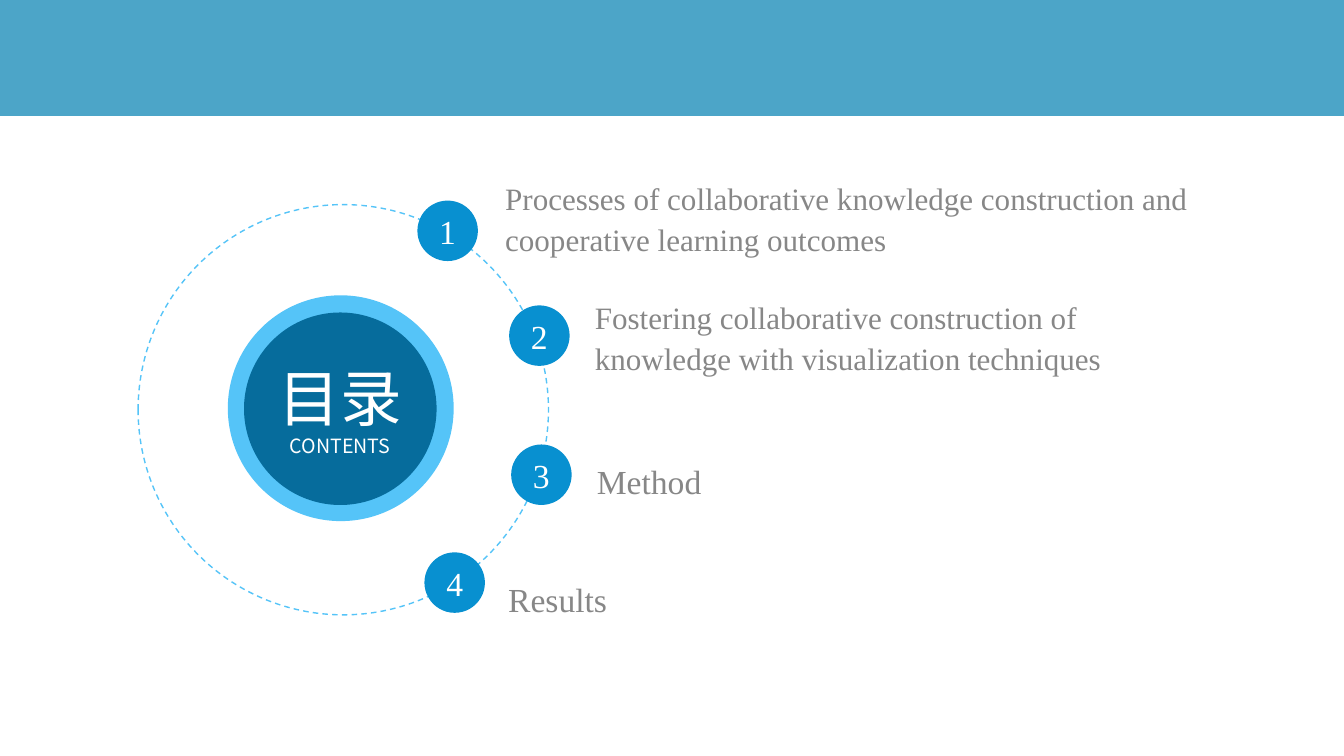
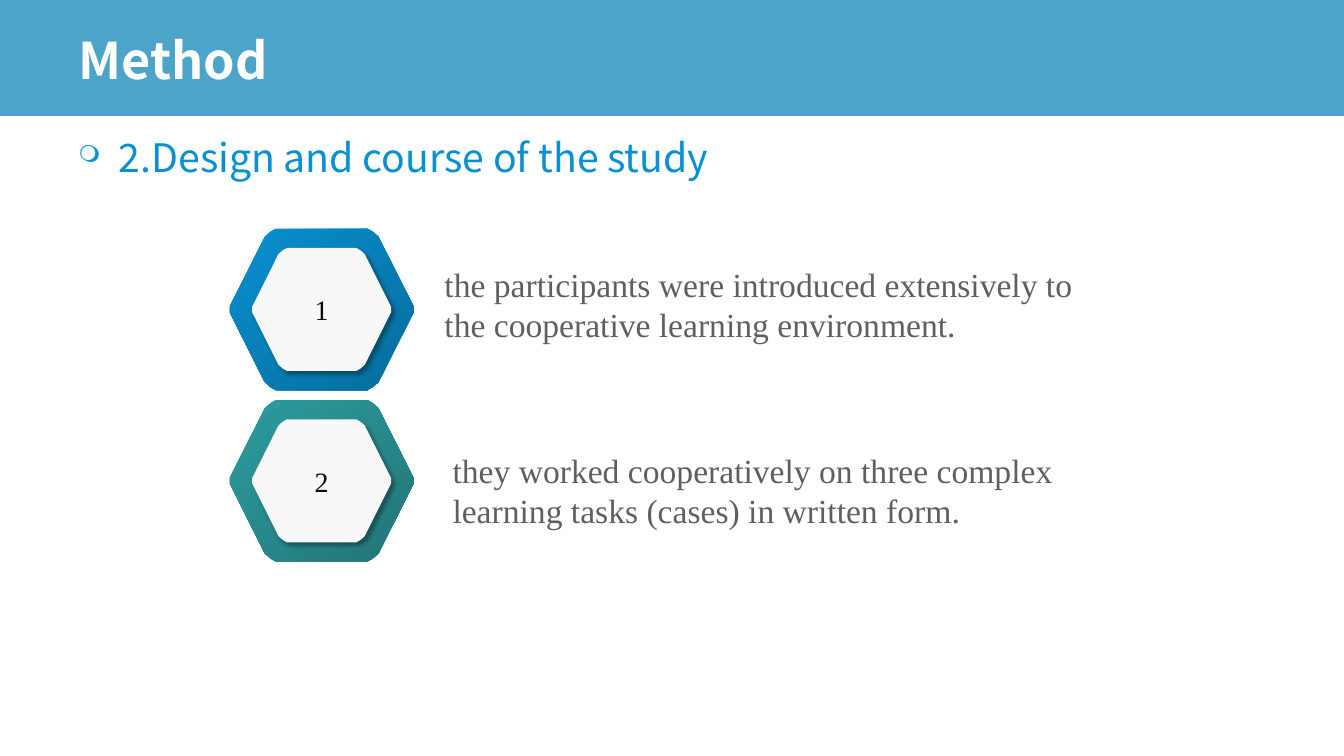
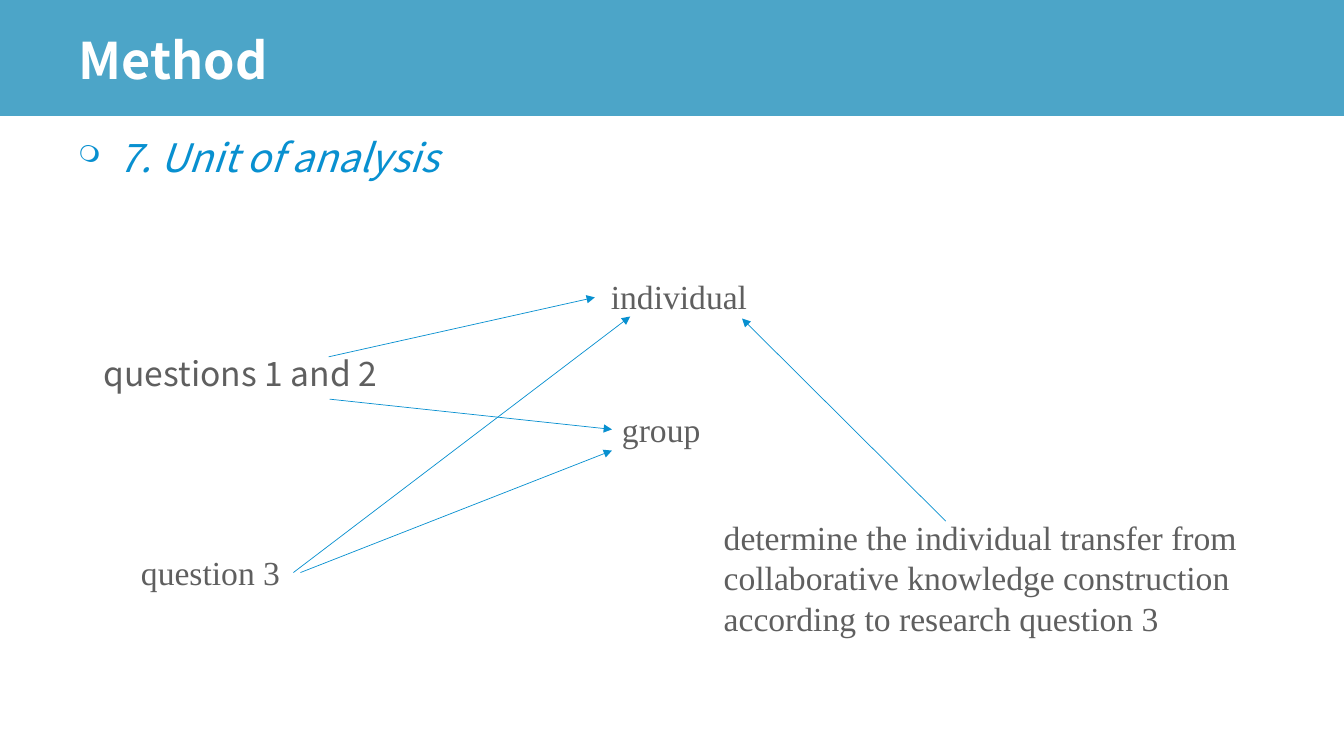
from dataclasses import dataclass, replace
from typing import NamedTuple

from lxml import etree
from pptx import Presentation
from pptx.dml.color import RGBColor
from pptx.enum.dml import MSO_LINE
from pptx.enum.shapes import MSO_CONNECTOR, MSO_SHAPE
from pptx.enum.text import MSO_ANCHOR, PP_ALIGN
from pptx.oxml.ns import qn
from pptx.util import Inches, Pt

RECT, OVAL = MSO_SHAPE.RECTANGLE, MSO_SHAPE.OVAL
STRAIGHT, DASH = MSO_CONNECTOR.STRAIGHT, MSO_LINE.DASH
TOP, MIDDLE = MSO_ANCHOR.TOP, MSO_ANCHOR.MIDDLE
LEFT, CENTER, JUSTIFY = PP_ALIGN.LEFT, PP_ALIGN.CENTER, PP_ALIGN.JUSTIFY

SANS, SERIF = "Noto Sans CJK SC", "Times New Roman"


@dataclass(frozen=True)
class Style:
    size: float
    color: str
    font: str = SERIF
    bold: bool = False
    italic: bool = False
    spacing: float = 1.0
    align: PP_ALIGN = LEFT


@dataclass(frozen=True)
class Theme:
    band: str = "0080B2"
    band_opacity: int = 70
    accent: str = "0890D0"
    accent_dark: str = "066C9C"
    accent_light: str = "55C4F8"
    teal: str = "2D9C9F"
    teal_dark: str = "227577"
    plate: str = "F8F8F8"
    title: Style = Style(36, "FFFFFF", SANS, bold=True, spacing=0.9)
    heading: Style = Style(28, "0890D0", SANS, spacing=1.1, align=JUSTIFY)
    body: Style = Style(24, "5F5F5F")
    agenda_long: Style = Style(22.2, "878787", spacing=1.1)
    agenda_short: Style = Style(24, "878787", spacing=1.2)
    badge: Style = Style(24, "FFFFFF", align=CENTER)
    hexagon: Style = Style(20, "080808", align=CENTER)
    contents: Style = Style(44, "FFFFFF", SANS, align=CENTER)
    contents_sub: Style = Style(14, "FFFFFF", SANS, align=CENTER)


THEME = Theme()


class Box(NamedTuple):
    left: float
    top: float
    width: float
    height: float


class Insets(NamedTuple):
    left: float = 0.1
    top: float = 0.05
    right: float = 0.1
    bottom: float = 0.05


class AgendaItem(NamedTuple):
    text: str
    style: Style
    badge_left: float
    badge_top: float
    text_box: Box


class Step(NamedTuple):
    text: str
    text_box: Box
    start_color: str
    end_color: str


class Label(NamedTuple):
    text: str
    box: Box
    style: Style = THEME.body


class Arrow(NamedTuple):
    x1: float
    y1: float
    x2: float
    y2: float


NO_INSETS = Insets(0, 0, 0, 0)
AGENDA_INSETS = Insets(0.04, 0, 0, 0)
BADGE_SIZE = 0.6
HEX_CENTER_X, HEX_FIRST_Y, HEX_PITCH = 3.19, 3.07, 1.7
HEX_OUTER, HEX_INNER = (0.91, 0.8), (0.69, 0.61)
# Upper right quarter, as fractions of half the width and half the height
HEX_QUARTER = [(0.5, -1), (0.56, -0.96), (0.62, -0.9), (1, -0.04)]

AGENDA = [
    AgendaItem("Processes of collaborative knowledge construction and "
               "cooperative learning outcomes",
               THEME.agenda_long, 4.14, 1.99, Box(4.97, 1.73, 6.85, 0.84)),
    AgendaItem("Fostering collaborative construction of knowledge with "
               "visualization techniques",
               THEME.agenda_long, 5.05, 3.03, Box(5.86, 2.91, 5.81, 0.84)),
    AgendaItem("Method", THEME.agenda_short, 5.07, 4.41, Box(5.88, 4.31, 3.3, 0.84)),
    AgendaItem("Results", THEME.agenda_short, 4.21, 5.48, Box(5, 5.48, 4.03, 0.84)),
]

STEPS = [
    Step("the participants were introduced extensively to the cooperative "
         "learning environment.",
         Box(4.31, 2.57, 6.65, 0.91), THEME.accent, THEME.accent_dark),
    Step("they worked cooperatively on three complex learning tasks (cases) "
         "in written form.",
         Box(4.39, 4.41, 6.67, 0.91), THEME.teal, THEME.teal_dark),
]

LABELS = [
    Label("determine the individual transfer from collaborative knowledge "
          "construction according to research question 3",
          Box(7.08, 5.08, 5.74, 1.31)),
    Label("individual", Box(5.96, 2.69, 2.88, 0.5)),
    Label("group", Box(6.07, 4.01, 2.01, 0.5)),
    Label("questions 1 and 2", Box(0.93, 3.45, 3.06, 0.5),
          replace(THEME.body, font=SANS)),
    Label("question 3", Box(1.3, 5.43, 1.7, 0.5)),
]

ARROWS = [
    Arrow(3.26, 3.54, 5.9, 2.95),
    Arrow(3.27, 3.96, 6.07, 4.26),
    Arrow(2.91, 5.68, 6.25, 3.14),
    Arrow(9.38, 5.17, 7.36, 3.16),
    Arrow(2.98, 5.68, 6.07, 4.47),
]


def rgb(color: str) -> RGBColor:
    return RGBColor.from_string(color)


def add_xml(parent, tag: str, **attributes):
    return etree.SubElement(parent, qn(tag), attributes)


def style_paragraph(paragraph, style: Style) -> None:
    paragraph.alignment = style.align
    paragraph.line_spacing = style.spacing
    font = paragraph.font
    font.name, font.size = style.font, Pt(style.size)
    font.bold, font.italic = style.bold, style.italic
    font.color.rgb = rgb(style.color)
    add_xml(font._element, "a:ea", typeface=style.font)


def write(shape, lines: list[tuple[str, Style]], anchor: MSO_ANCHOR = MIDDLE,
          insets: Insets = Insets()) -> None:
    frame = shape.text_frame
    frame.word_wrap = True
    frame.vertical_anchor = anchor
    frame.margin_left, frame.margin_top, frame.margin_right, frame.margin_bottom = (
        Inches(inset) for inset in insets)
    for index, (text, style) in enumerate(lines):
        paragraph = frame.add_paragraph() if index else frame.paragraphs[0]
        paragraph.add_run().text = text
        style_paragraph(paragraph, style)


def add_text(slide, box: Box, text: str, style: Style, anchor: MSO_ANCHOR = TOP,
             insets: Insets = Insets()) -> None:
    holder = slide.shapes.add_textbox(*map(Inches, box))
    write(holder, [(text, style)], anchor, insets)


def add_preset(slide, preset: MSO_SHAPE, box: Box, fill: str | None = None):
    """Add a flat shape without outline; no fill leaves it hollow."""
    shape = slide.shapes.add_shape(preset, *map(Inches, box))
    shape.shadow.inherit = False
    shape.line.fill.background()
    if fill:
        shape.fill.solid()
        shape.fill.fore_color.rgb = rgb(fill)
    else:
        shape.fill.background()
    return shape


def add_slide(deck):
    """Add a blank slide with the band along its top."""
    slide = deck.slides.add_slide(deck.slide_layouts[6])
    band = add_preset(slide, RECT, Box(-0.01, -0.02, 13.35, 1.17), THEME.band)
    color = band._element.spPr.find(qn("a:solidFill"))[0]
    add_xml(color, "a:alpha", val=str(THEME.band_opacity * 1000))
    return slide


def add_method_slide(deck, heading: str, heading_style: Style):
    slide = add_slide(deck)
    add_text(slide, Box(0.68, 0.19, 11.98, 0.87), "Method", THEME.title, MIDDLE)
    holder = slide.shapes.add_textbox(*map(Inches, Box(0.68, 1.23, 11.98, 0.84)))
    properties = holder.text_frame.paragraphs[0]._p.get_or_add_pPr()
    properties.set("marL", str(Inches(0.4)))
    properties.set("indent", str(-Inches(0.4)))
    add_xml(add_xml(properties, "a:buClr"), "a:srgbClr", val=THEME.accent)
    add_xml(properties, "a:buSzPct", val="60000")
    add_xml(properties, "a:buChar", char="❍")
    write(holder, [(heading, heading_style)], TOP)
    return slide


def add_hexagon(slide, center_y: float, half_size: tuple[float, float]):
    """Add a hexagon with cut corners, mirrored from one quarter."""
    right = HEX_QUARTER + [(x, -y) for x, y in reversed(HEX_QUARTER)]
    outline = right + [(-x, y) for x, y in reversed(right)]
    half_width, half_height = half_size
    points = [(Inches(HEX_CENTER_X + x * half_width), Inches(center_y + y * half_height))
              for x, y in outline]
    builder = slide.shapes.build_freeform(*points[0])
    builder.add_line_segments(points[1:], close=True)
    hexagon = builder.convert_to_shape()
    hexagon.shadow.inherit = False
    hexagon.line.fill.background()
    return hexagon


def add_drop_shadow(shape) -> None:
    effects = shape._element.spPr.find(qn("a:effectLst"))
    shadow = add_xml(effects, "a:outerShdw", blurRad=str(Pt(3)), dist=str(Pt(3)),
                     dir=str(45 * 60000), algn="tl", rotWithShape="0")
    color = add_xml(shadow, "a:srgbClr", val="000000")
    add_xml(color, "a:alpha", val="35000")


def add_step(slide, number: int, step: Step) -> None:
    center_y = HEX_FIRST_Y + (number - 1) * HEX_PITCH
    rim = add_hexagon(slide, center_y, HEX_OUTER)
    rim.fill.gradient()
    rim.fill.gradient_angle = 310
    for stop, color in zip(rim.fill.gradient_stops, (step.start_color, step.end_color)):
        stop.color.rgb = rgb(color)
    plate = add_hexagon(slide, center_y, HEX_INNER)
    plate.fill.solid()
    plate.fill.fore_color.rgb = rgb(THEME.plate)
    add_drop_shadow(plate)
    write(plate, [(str(number), THEME.hexagon)])
    add_text(slide, step.text_box, step.text, THEME.body)


def add_arrow(slide, arrow: Arrow) -> None:
    connector = slide.shapes.add_connector(STRAIGHT, *map(Inches, arrow))
    connector.line.color.rgb = rgb(THEME.accent)
    connector.line.width = Pt(0.5)
    add_xml(connector.line._get_or_add_ln(), "a:tailEnd", type="triangle")
    add_xml(connector._element.spPr, "a:effectLst")


def build_contents(deck) -> None:
    slide = add_slide(deck)
    add_preset(slide, OVAL, Box(2.26, 2.93, 2.24, 2.24), THEME.accent_light)
    orbit = add_preset(slide, OVAL, Box(1.37, 2.03, 4.07, 4.07))
    orbit.line.color.rgb = rgb(THEME.accent_light)
    orbit.line.width = Pt(1)
    orbit.line.dash_style = DASH
    hub = add_preset(slide, OVAL, Box(2.42, 3.1, 1.91, 1.91), THEME.accent_dark)
    write(hub, [("目录", THEME.contents), ("CONTENTS", THEME.contents_sub)],
          insets=NO_INSETS)
    for number, item in enumerate(AGENDA, 1):
        add_text(slide, item.text_box, item.text, item.style, MIDDLE, AGENDA_INSETS)
        badge = add_preset(slide, OVAL, Box(item.badge_left, item.badge_top,
                                            BADGE_SIZE, BADGE_SIZE), THEME.accent)
        write(badge, [(str(number), THEME.badge)], insets=NO_INSETS)


def build_design(deck) -> None:
    slide = add_method_slide(deck, "2.Design and course of the study", THEME.heading)
    for number, step in enumerate(STEPS, 1):
        add_step(slide, number, step)


def build_unit_of_analysis(deck) -> None:
    slide = add_method_slide(deck, "7. Unit of analysis",
                             replace(THEME.heading, italic=True))
    for label in LABELS:
        add_text(slide, label.box, label.text, label.style)
    for arrow in ARROWS:
        add_arrow(slide, arrow)


def main() -> None:
    deck = Presentation()
    deck.slide_width, deck.slide_height = Inches(13.33), Inches(7.5)
    build_contents(deck)
    build_design(deck)
    build_unit_of_analysis(deck)
    deck.save("out.pptx")


if __name__ == "__main__":
    main()
